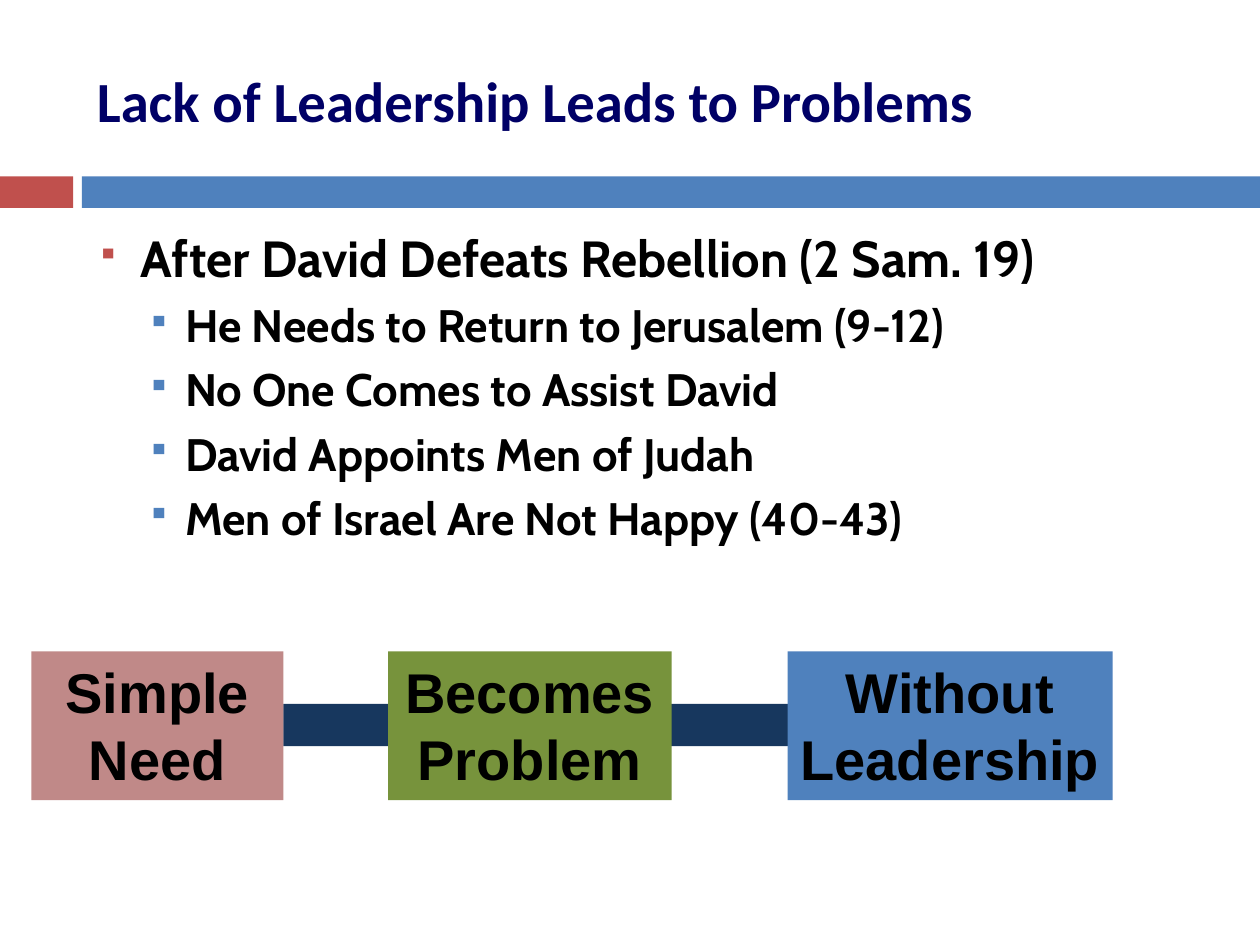
import pptx
import pptx.util
import pptx.dml.color
import pptx.enum.shapes
import pptx.enum.text
import pptx.oxml
import pptx.oxml.ns
import lxml.etree

SHAPES = pptx.enum.shapes.MSO_SHAPE
ANCHOR = pptx.enum.text.MSO_ANCHOR
ALIGN = pptx.enum.text.PP_ALIGN
LEVELS = [
    dict(size=29, margin=0.35, hang=0.35, before=7, bullet="C0504D", share=60),
    dict(size=26, margin=0.7, hang=0.3, before=5.5, bullet="4F81BD", share=70),
]
POINTS = [
    (0, "After David Defeats Rebellion (2 Sam. 19)"),
    (1, "He Needs to Return to Jerusalem (9-12)"),
    (1, "No One Comes to Assist David"),
    (1, "David Appoints Men of Judah"),
    (1, "Men of Israel Are Not Happy (40-43)"),
]
STAGES = [
    ("Simple Need", 0, 2, "953735", 59),
    ("Becomes Problem", 2.83, 2.25, "77933C", 100),
    ("Without Leadership", 6, 2.58, "4F81BD", 100),
]


def color(code):
    """Turn a hex string into a colour."""
    return pptx.dml.color.RGBColor.from_string(code)


def inches(box):
    """Turn left, top, width and height into lengths."""
    return [pptx.util.Inches(value) for value in box]


def set_font(para, name, size, code):
    """Set the bold font of a paragraph."""
    para.font.name, para.font.size, para.font.bold = name, pptx.util.Pt(size), True
    para.font.color.rgb = color(code)


def add_block(page, kind, box, code, opacity=100):
    """Add a plain filled shape without outline."""
    block = page.shapes.add_shape(kind, *inches(box))
    block.shadow.inherit = False
    block.fill.solid()
    block.fill.fore_color.rgb = color(code)
    block.line.fill.background()
    if opacity < 100:
        tint = block.fill._xPr.find(".//" + pptx.oxml.ns.qn("a:srgbClr"))
        alpha = lxml.etree.SubElement(tint, pptx.oxml.ns.qn("a:alpha"))
        alpha.set("val", str(opacity * 1000))
    return block


def add_frame(page, box, anchor):
    """Add a wrapping text box and return its frame."""
    frame = page.shapes.add_textbox(*inches(box)).text_frame
    frame.word_wrap, frame.vertical_anchor = True, anchor
    return frame


def set_bullet(para, style):
    """Give a paragraph a hanging square bullet."""
    props = para._p.get_or_add_pPr()
    props.set("marL", str(pptx.util.Inches(style["margin"])))
    props.set("indent", str(-pptx.util.Inches(style["hang"])))
    hue = lxml.etree.SubElement(props, pptx.oxml.ns.qn("a:buClr"))
    lxml.etree.SubElement(hue, pptx.oxml.ns.qn("a:srgbClr")).set("val", style["bullet"])
    size = lxml.etree.SubElement(props, pptx.oxml.ns.qn("a:buSzPct"))
    size.set("val", str(style["share"] * 1000))
    lxml.etree.SubElement(props, pptx.oxml.ns.qn("a:buChar")).set("char", "▪")


def add_band(page, box):
    """Draw the red and blue rule across the page."""
    left, top, width, height = box
    tab, start = 0.58, 0.65
    add_block(page, SHAPES.RECTANGLE, (left, top, tab, height), "C0504D")
    add_block(page, SHAPES.RECTANGLE, (left + start, top, width - start, height), "4F81BD")


def add_title(page, box, text):
    """Place the heading."""
    para = add_frame(page, box, ANCHOR.MIDDLE).paragraphs[0]
    para.text = text
    set_font(para, "Calibri", 32.4, "000066")


def add_points(page, box, points):
    """Place the bulleted outline."""
    frame = add_frame(page, box, ANCHOR.TOP)
    for index, (level, text) in enumerate(points):
        para = frame.add_paragraph() if index else frame.paragraphs[0]
        style = LEVELS[level]
        para.text, para.level = text, level
        para.space_before = pptx.util.Pt(style["before"])
        set_bullet(para, style)
        set_font(para, "Cabin", style["size"], "000000")


def add_chain(page, box, stages):
    """Draw the stages in a row over one long arrow."""
    left, top, width, height = box
    arrow = (left + 2, top + 0.25, 5.17, 0.67)
    add_block(page, SHAPES.RIGHT_ARROW, arrow, "17375E")
    for text, offset, span, code, opacity in stages:
        place = (left + offset, top, span, height)
        frame = add_block(page, SHAPES.RECTANGLE, place, code, opacity).text_frame
        frame.word_wrap, frame.vertical_anchor = True, ANCHOR.TOP
        para = frame.paragraphs[0]
        para.text, para.alignment = text, ALIGN.CENTER
        set_font(para, "Arial", 32, "000000")


def main():
    """Build and save the deck."""
    deck = pptx.Presentation()
    deck.slide_width, deck.slide_height = pptx.util.Inches(10), pptx.util.Inches(7.5)
    page = deck.slides.add_slide(deck.slide_layouts[6])
    add_band(page, (0, 1.4, 10, 0.25))
    add_title(page, (0.67, 0.25, 8.92, 1.08), "Lack of Leadership Leads to Problems")
    add_points(page, (0.67, 1.75, 8.92, 4.92), POINTS)
    add_chain(page, (0.25, 5.17, 8.58, 1.18), STAGES)
    deck.save("out.pptx")


if __name__ == "__main__":
    main()
